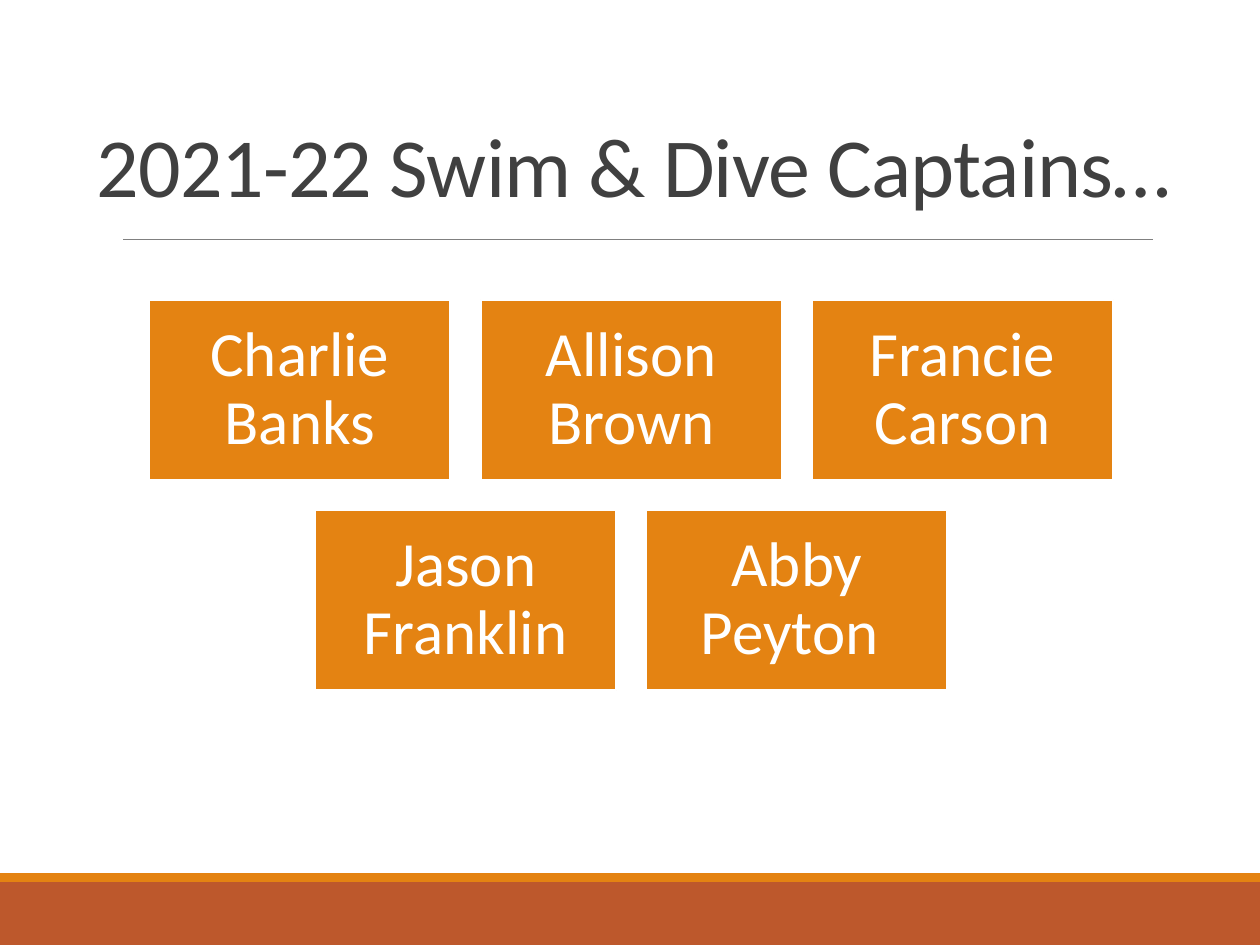
import pptx
import pptx.util
import pptx.dml.color
import pptx.enum.shapes
import pptx.enum.text

Inches = pptx.util.Inches
Pt = pptx.util.Pt
Color = pptx.dml.color.RGBColor
Anchor = pptx.enum.text.MSO_ANCHOR

RUST = Color(0xBD, 0x58, 0x2C)
ORANGE = Color(0xE4, 0x83, 0x12)
GRAY = Color(0x80, 0x80, 0x80)
DARK = Color(0x40, 0x40, 0x40)
WHITE = Color(0xFF, 0xFF, 0xFF)

WIDTH = 10
CARD_W, CARD_H = 2.39, 1.43
STEP_X, STEP_Y = 2.63, 1.67
MID, TOP = 5.01, 2.38
ROWS = [
    ["Charlie Banks", "Allison Brown", "Francie Carson"],
    ["Jason Franklin", "Abby Peyton "],
]


def add_rect(slide, left, top, width, height, fill):
    rect = slide.shapes.add_shape(
        pptx.enum.shapes.MSO_SHAPE.RECTANGLE,
        Inches(left), Inches(top), Inches(width), Inches(height))
    rect.shadow.inherit = False
    rect.fill.solid()
    rect.fill.fore_color.rgb = fill
    rect.line.fill.background()
    return rect


def set_text(frame, text, size, color, anchor, spacing):
    frame.word_wrap = True
    frame.vertical_anchor = anchor
    para = frame.paragraphs[0]
    para.text = text
    para.line_spacing = spacing
    para.font.name = "Calibri"
    para.font.size = Pt(size)
    para.font.color.rgb = color
    return para


def add_rule(slide, left, right, top):
    rule = slide.shapes.add_connector(
        pptx.enum.shapes.MSO_CONNECTOR.STRAIGHT,
        Inches(left), Inches(top), Inches(right), Inches(top))
    rule.line.color.rgb = GRAY
    rule.line.width = Pt(0.5)
    props = rule._element.spPr
    props.append(pptx.oxml.parse_xml(
        '<a:effectLst xmlns:a="http://schemas.openxmlformats.org/drawingml/2006/main"/>'))


def add_title(slide, text):
    box = slide.shapes.add_textbox(
        Inches(0.67), Inches(0.17), Inches(8.75), Inches(1.58))
    para = set_text(box.text_frame, text, 48, DARK, Anchor.BOTTOM, 0.85)
    para.runs[0].font._element.set("spc", "-50")


def add_card(slide, left, top, name):
    card = add_rect(slide, left, top, CARD_W, CARD_H, ORANGE)
    card.line.color.rgb = WHITE
    card.line.width = Pt(1.25)
    frame = card.text_frame
    frame.margin_left = frame.margin_right = Inches(0.15)
    frame.margin_top = frame.margin_bottom = Inches(0.15)
    para = set_text(frame, name, 36, WHITE, Anchor.MIDDLE, 0.9)
    para.alignment = pptx.enum.text.PP_ALIGN.CENTER


def add_cards(slide):
    for row, names in enumerate(ROWS):
        left = MID - ((len(names) - 1) * STEP_X + CARD_W) / 2
        for col, name in enumerate(names):
            add_card(slide, left + col * STEP_X, TOP + row * STEP_Y, name)


def main():
    deck = pptx.Presentation()
    deck.slide_width = Inches(WIDTH)
    deck.slide_height = Inches(7.5)
    slide = deck.slides.add_slide(deck.slide_layouts[6])
    add_rect(slide, 0, 7, WIDTH, 0.5, RUST)
    add_rect(slide, 0, 6.93, WIDTH, 0.07, ORANGE)
    add_rule(slide, 0.98, 9.15, 1.9)
    add_title(slide, "2021-22 Swim & Dive Captains…")
    add_cards(slide)
    deck.save("out.pptx")


if __name__ == "__main__":
    main()
